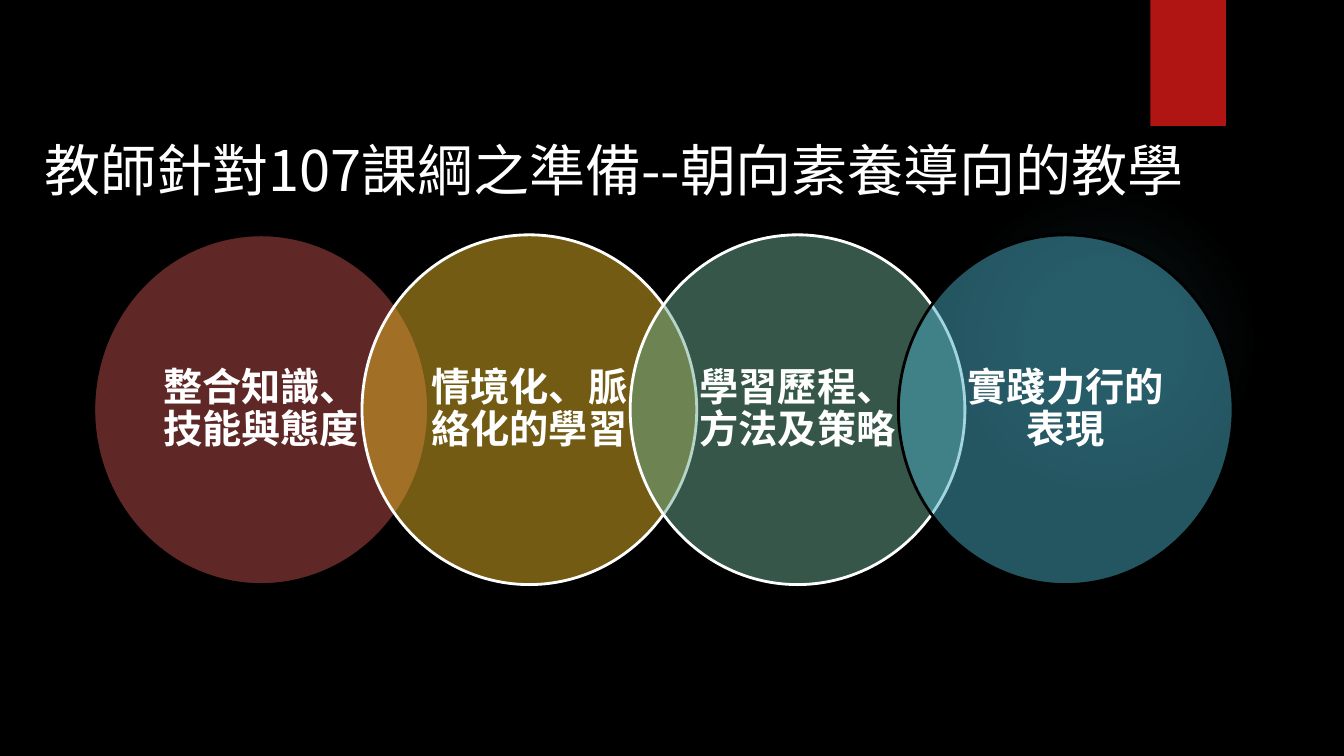
from lxml import etree
from pptx import Presentation
from pptx.dml.color import RGBColor
from pptx.enum.shapes import MSO_SHAPE
from pptx.enum.text import MSO_ANCHOR, MSO_AUTO_SIZE, PP_ALIGN
from pptx.oxml import parse_xml
from pptx.oxml.ns import nsdecls, qn
from pptx.util import Inches, Pt

OVAL = MSO_SHAPE.OVAL
RECTANGLE = MSO_SHAPE.RECTANGLE
TOP, MIDDLE = MSO_ANCHOR.TOP, MSO_ANCHOR.MIDDLE
LEFT, CENTER = PP_ALIGN.LEFT, PP_ALIGN.CENTER
GROW = MSO_AUTO_SIZE.SHAPE_TO_FIT_TEXT

FONT = "Noto Sans CJK SC"
BLACK = RGBColor(0x00, 0x00, 0x00)
WHITE = RGBColor(0xFF, 0xFF, 0xFF)
TAB_RED = RGBColor(0xB0, 0x15, 0x13)
RED = RGBColor(0xBF, 0x50, 0x4D)
GOLD = RGBColor(0xE6, 0xB7, 0x29)
GREEN = RGBColor(0x6A, 0xAC, 0x90)
BLUE = RGBColor(0x49, 0xAC, 0xC5)
GLOW = RGBColor(0x50, 0xB9, 0xC1)

TITLE = "教師針對107課綱之準備--朝向素養導向的教學"
STAGES = [
    ("整合知識、技能與態度", RED, BLACK),
    ("情境化、脈絡化的學習", GOLD, WHITE),
    ("學習歷程、方法及策略", GREEN, WHITE),
    ("實踐力行的表現", BLUE, BLACK),
]
FIRST_LEFT, STAGE_STEP = 0.93, 2.66
GLOW_STOPS = [(0, 7), (36, 6), (69, 0)]


def add_plain_shape(slide, preset, left, top, width, height):
    shape = slide.shapes.add_shape(
        preset, Inches(left), Inches(top), Inches(width), Inches(height))
    shape.shadow.inherit = False
    return shape


def style_paragraph(paragraph, size, bold, alignment):
    paragraph.alignment = alignment
    font = paragraph.font
    font.size = Pt(size)
    font.bold = bold
    font.color.rgb = WHITE
    font.name = FONT
    latin = paragraph._p.pPr.find(qn("a:defRPr")).find(qn("a:latin"))
    east_asian = etree.Element(qn("a:ea"), typeface=FONT)
    latin.addnext(east_asian)


def add_glow(slide):
    glow = add_plain_shape(slide, OVAL, 9.41, 1.83, 3.08, 3.08)
    glow.line.fill.background()
    stops = "".join(
        f'<a:gs pos="{position * 1000}"><a:srgbClr val="{GLOW}">'
        f'<a:alpha val="{opacity * 1000}"/></a:srgbClr></a:gs>'
        for position, opacity in GLOW_STOPS)
    gradient = parse_xml(
        f'<a:gradFill {nsdecls("a")}><a:gsLst>{stops}</a:gsLst>'
        '<a:path path="circle"><a:fillToRect l="50000" t="50000" '
        'r="50000" b="50000"/></a:path></a:gradFill>')
    glow._element.spPr.find(qn("a:prstGeom")).addnext(gradient)


def add_tab(slide):
    tab = add_plain_shape(slide, RECTANGLE, 11.41, 0, 0.75, 1.25)
    tab.fill.solid()
    tab.fill.fore_color.rgb = TAB_RED
    tab.line.fill.background()


def add_stage(slide, left, label, color, outline):
    circle = add_plain_shape(slide, OVAL, left, 2.33, 3.32, 3.47)
    circle.fill.solid()
    circle.fill.fore_color.rgb = color
    rgb = circle._element.spPr.find(qn("a:solidFill")).find(qn("a:srgbClr"))
    etree.SubElement(rgb, qn("a:alpha"), val="50000")
    circle.line.color.rgb = outline
    circle.line.width = Pt(2)

    frame = circle.text_frame
    frame.word_wrap = True
    frame.vertical_anchor = MIDDLE
    frame.margin_left = frame.margin_right = Inches(0.15)
    frame.margin_top = frame.margin_bottom = Inches(0.04)
    frame.text = label
    paragraph = frame.paragraphs[0]
    style_paragraph(paragraph, 28, True, CENTER)
    paragraph.line_spacing = 0.9


def set_title(slide):
    title = slide.shapes.title
    title.left, title.top = Inches(0.34), Inches(1.29)
    title.width, title.height = Inches(11.91), Inches(1.45)
    frame = title.text_frame
    frame.text = TITLE
    frame.word_wrap = True
    frame.auto_size = GROW
    frame.vertical_anchor = TOP
    style_paragraph(frame.paragraphs[0], 40, False, LEFT)


def main():
    deck = Presentation()
    deck.slide_width, deck.slide_height = Inches(13.33), Inches(7.5)
    slide = deck.slides.add_slide(deck.slide_layouts[5])
    slide.background.fill.solid()
    slide.background.fill.fore_color.rgb = BLACK

    add_glow(slide)
    add_tab(slide)
    for index, (label, color, outline) in enumerate(STAGES):
        add_stage(slide, FIRST_LEFT + index * STAGE_STEP, label, color, outline)
    set_title(slide)
    deck.save("out.pptx")


if __name__ == "__main__":
    main()
